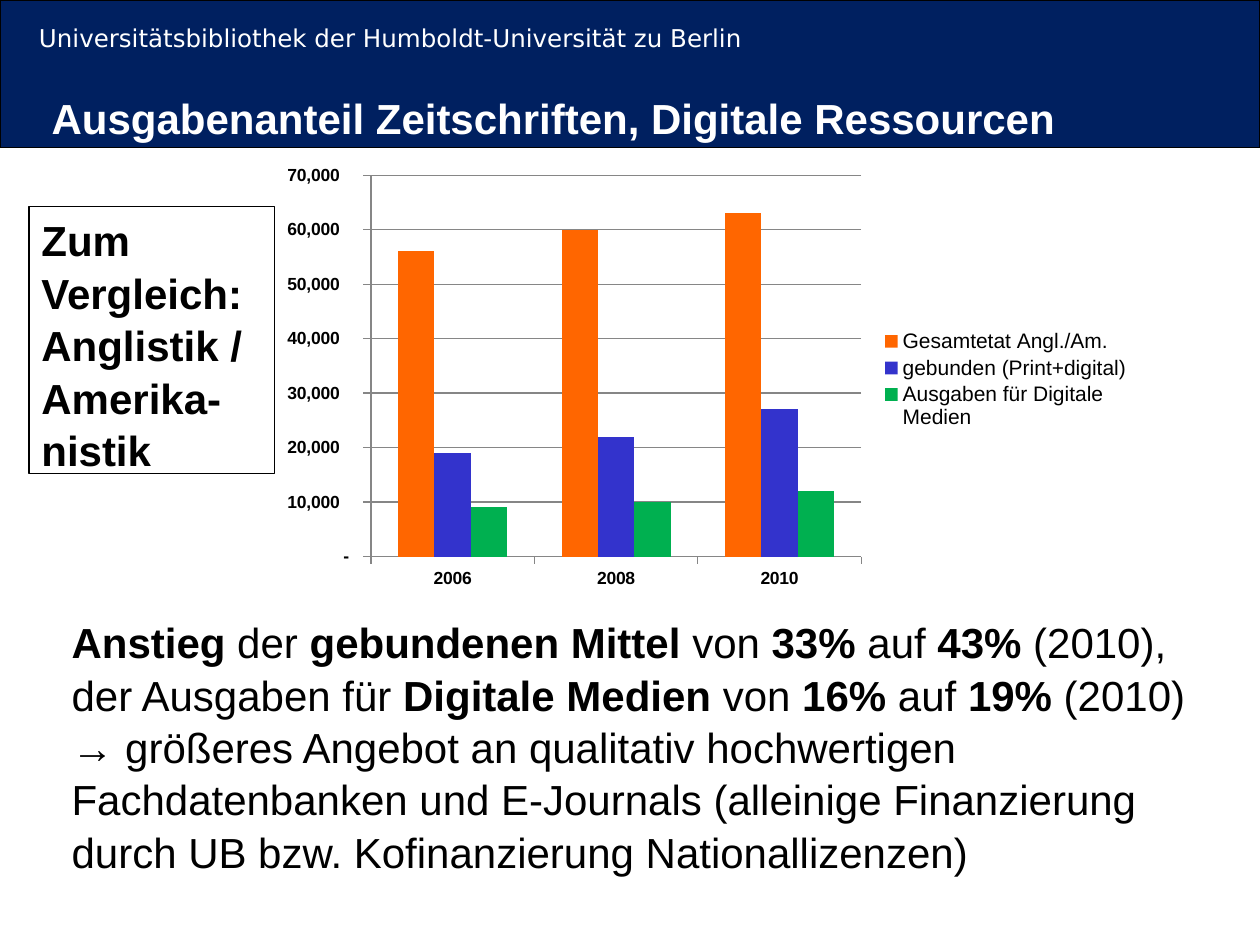
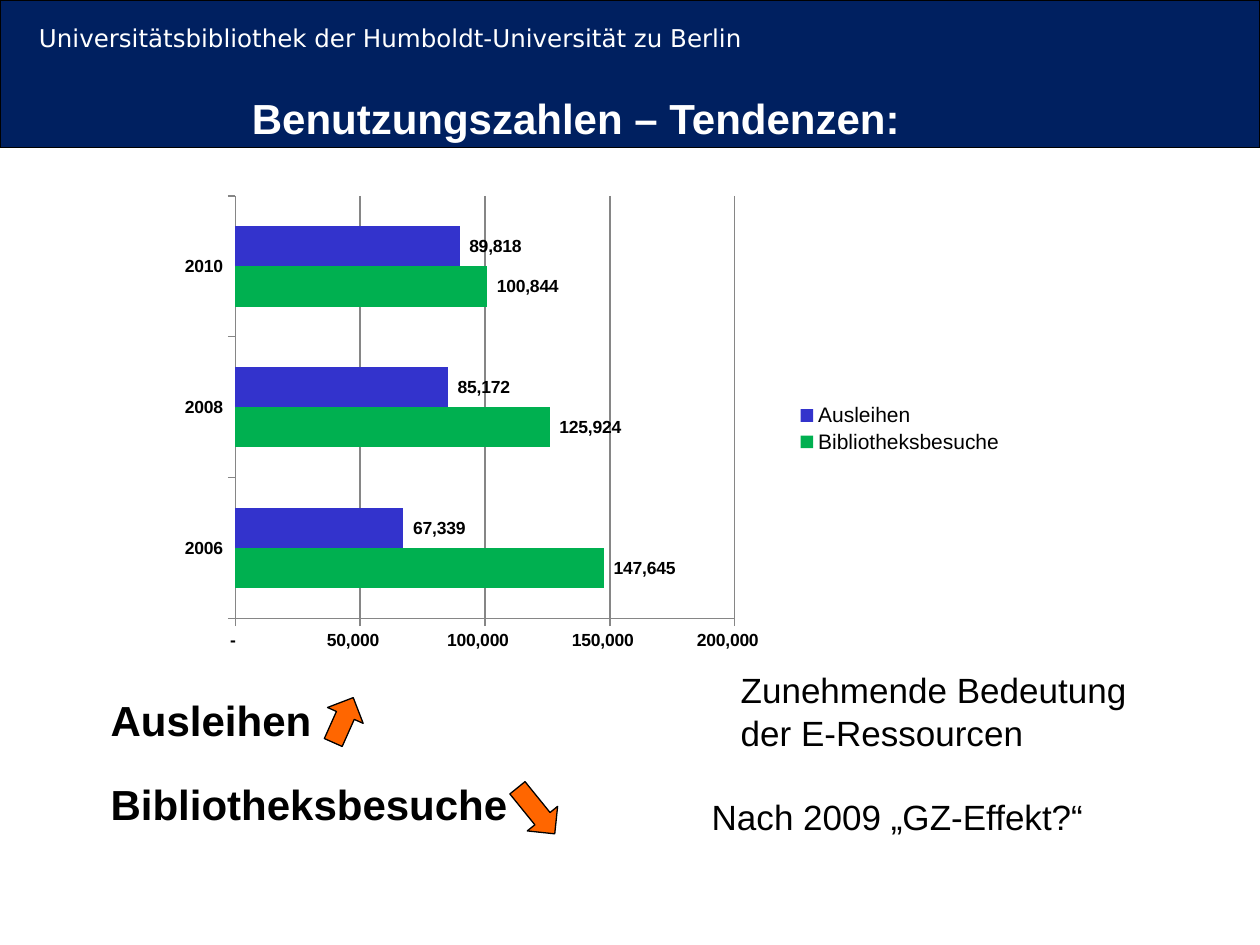
from pptx import Presentation
from pptx import util as u
from pptx.chart import data as cdata
from pptx.dml import color as col
from pptx.enum import chart as ch
from pptx.enum import shapes, text
from pptx.oxml import parse_xml
from pptx.oxml import ns

COLORS = {
    "navy": "002060", "white": "FFFFFF", "black": "000000", "grey": "868686",
    "orange": "FF6600", "blue": "3333CC", "green": "00B050",
}
FONT = "Arial"
HEAD_FONT = "DejaVu Sans"
HEAD = "Universitätsbibliothek der Humboldt-Universität zu Berlin"
YEARS = ["2006", "2008", "2010"]
NUMBERS = '_-* #,##0\\ _€_-;\\-* #,##0\\ _€_-;_-* "-"?'
LEADING = 1.04


def rgb(name):
    return col.RGBColor.from_string(COLORS[name])


def inches(box):
    return [u.Inches(v) for v in box]


def style(font, size, color="black", bold=False, name=FONT):
    font.name = name
    font.size = u.Pt(size)
    font.bold = bold
    font.color.rgb = rgb(color)


def fill_frame(frame, paras, size, color="black", bold=False):
    frame.word_wrap = True
    frame.auto_size = text.MSO_AUTO_SIZE.NONE
    frame.vertical_anchor = text.MSO_ANCHOR.TOP
    frame.text = "\n".join(paras)
    for para in frame.paragraphs:
        para.line_spacing = LEADING
        para.alignment = text.PP_ALIGN.LEFT
        for run in para.runs:
            style(run.font, size, color, bold)


def add_text(slide, box, paras, size, bold=False):
    frame = slide.shapes.add_textbox(*inches(box)).text_frame
    fill_frame(frame, paras, size, bold=bold)
    return frame


def add_shape(slide, kind, box, fill, turn=0):
    shape = slide.shapes.add_shape(kind, *inches(box))
    shape.shadow.inherit = False
    shape.fill.solid()
    shape.fill.fore_color.rgb = rgb(fill)
    shape.line.color.rgb = rgb("black")
    shape.line.width = u.Pt(0.75)
    shape.rotation = turn
    return shape


def add_header(slide, box, caption, align):
    left, top, width, height = box
    title = slide.shapes.title
    band = add_shape(slide, shapes.MSO_SHAPE.RECTANGLE, box, "navy")
    title.element.addprevious(band.element)

    frame = slide.shapes.add_textbox(
        *inches((left + 0.25, top + 0.17, 6, 0.26))).text_frame
    frame.margin_left = frame.margin_right = u.Inches(0.06)
    frame.margin_top = frame.margin_bottom = u.Inches(0.01)
    frame.word_wrap = True
    frame.text = HEAD
    style(frame.paragraphs[0].runs[0].font, 14, "white", name=HEAD_FONT)

    title.left, title.top, title.width, title.height = inches(
        (left + 0.31, top + height - 0.5, 8.52, 0.5))
    fill_frame(title.text_frame, [caption], 24, "white", True)
    title.text_frame.paragraphs[0].alignment = align


def layout(box, inner=False):
    target = '<c:layoutTarget val="inner"/>' if inner else ""
    modes = "".join(f'<c:{k}Mode val="edge"/>' for k in "xy")
    sizes = "".join(f'<c:{k} val="{v}"/>' for k, v in zip("xywh", box))
    return parse_xml(f'<c:layout {ns.nsdecls("c")}><c:manualLayout>'
                     f'{target}{modes}{sizes}</c:manualLayout></c:layout>')


def style_axis(axis):
    axis.major_tick_mark = ch.XL_TICK_MARK.OUTSIDE
    axis.minor_tick_mark = ch.XL_TICK_MARK.NONE
    axis.format.line.color.rgb = rgb("grey")
    style(axis.tick_labels.font, 10, bold=True)


def add_chart(slide, box, kind, series, top, step, plot_box, key_box, labels=False):
    data = cdata.CategoryChartData(number_format=NUMBERS)
    data.categories = YEARS
    for name, values, _ in series:
        data.add_series(name, values)
    chart = slide.shapes.add_chart(kind, *inches(box), data).chart
    chart.has_title = False
    style(chart.font, 10)

    plot = chart.plots[0]
    plot.gap_width = 150
    plot.overlap = 0
    plot.vary_by_categories = False
    for part, (_, _, color) in zip(plot.series, series):
        part.format.fill.solid()
        part.format.fill.fore_color.rgb = rgb(color)
        part.invert_if_negative = False
    if labels:
        plot.has_data_labels = True
        marks = plot.data_labels
        marks.show_value = True
        marks.position = ch.XL_LABEL_POSITION.OUTSIDE_END
        marks.number_format = NUMBERS
        marks.number_format_is_linked = False
        style(marks.font, 10, bold=True)

    style_axis(chart.category_axis)
    axis = chart.value_axis
    style_axis(axis)
    axis.minimum_scale, axis.maximum_scale, axis.major_unit = 0, top, step
    axis.tick_labels.number_format = NUMBERS
    axis.tick_labels.number_format_is_linked = False
    axis.has_major_gridlines = True
    axis.major_gridlines.format.line.color.rgb = rgb("grey")

    chart.has_legend = True
    key = chart.legend
    key.position = ch.XL_LEGEND_POSITION.RIGHT
    key.include_in_layout = False
    style(key.font, 12)
    area = chart.element.xpath(".//c:plotArea")[0]
    for old in area.xpath("./c:layout"):
        area.remove(old)
    area.insert(0, layout(plot_box, True))
    spot = chart.element.xpath(".//c:legend/c:legendPos")[0]
    spot.addnext(layout(key_box))


def add_summary(slide, box):
    lines = [
        ["Anstieg", " der ", "gebundenen Mittel ", "von ", "33%", " auf ", "43%",
         " (2010),"],
        ["", "der Ausgaben für ", "Digitale Medien ", "von ", "16%", " auf ", "19%",
         " (2010)"],
        ["→", " größeres Angebot an qualitativ hochwertigen Fachdatenbanken und "
         "E-Journals (alleinige Finanzierung durch UB bzw. Kofinanzierung "
         "Nationallizenzen)"],
    ]
    frame = add_text(slide, box, [""] * len(lines), 24)
    for para, parts in zip(frame.paragraphs, lines):
        for i, part in enumerate(parts):
            if part:
                run = para.add_run()
                run.text = part
                style(run.font, 24, bold=i % 2 == 0)


def add_trends(slide, box):
    left, top, width, height = box
    frame = add_text(slide, (left, top + 0.21, 7.27, 1.58),
                     ["Ausleihen", "Bibliotheksbesuche"], 24, True)
    frame.paragraphs[1].space_before = u.Pt(18)
    kinds = shapes.MSO_SHAPE
    add_shape(slide, kinds.UP_ARROW, (left + 1.79, top + 0.28, 0.31, 0.39),
              "orange", 24)
    add_shape(slide, kinds.DOWN_ARROW, (left + 3.32, top + 0.96, 0.31, 0.47),
              "orange", 321)
    add_text(slide, (left + 4.77, top + 1.01, 3.98, 0.44),
             ["Nach 2009 „GZ-Effekt?“"], 20)
    add_text(slide, (left + 5, top, 3.59, 0.77),
             ["Zunehmende Bedeutung der E-Ressourcen"], 20)


def budget(slide):
    add_header(slide, (0, 0, 10, 1.17),
               "Ausgabenanteil Zeitschriften, Digitale Ressourcen",
               text.PP_ALIGN.LEFT)
    add_chart(slide, (2.11, 1.25, 6.95, 3.52), ch.XL_CHART_TYPE.COLUMN_CLUSTERED, [
        ("Gesamtetat Angl./Am.", (56000, 60000, 63000), "orange"),
        ("gebunden (Print+digital)", (19000, 22000, 27000), "blue"),
        ("Ausgaben für Digitale Medien", (9000, 10000, 12000), "green"),
    ], 70000, 10000, (0.12, 0.04, 0.56, 0.86), (0.7, 0.38, 0.29, 0.24))
    add_summary(slide, (0.47, 4.83, 9.3, 2.12))
    note = add_shape(slide, shapes.MSO_SHAPE.RECTANGLE, (0.23, 1.64, 1.95, 2.12),
                     "white")
    fill_frame(note.text_frame, ["Zum Vergleich: Anglistik / Amerika-nistik"],
               24, bold=True)


def usage(slide):
    add_header(slide, (0, 0, 10, 1.17), "Benutzungszahlen – Tendenzen:",
               text.PP_ALIGN.CENTER)
    add_chart(slide, (1.33, 1.48, 6.72, 3.77), ch.XL_CHART_TYPE.BAR_CLUSTERED, [
        ("Bibliotheksbesuche", (147645, 125924, 100844), "green"),
        ("Ausleihen", (67339, 85172, 89818), "blue"),
    ], 200000, 50000, (0.08, 0.02, 0.59, 0.89), (0.74, 0.45, 0.25, 0.12), True)
    add_trends(slide, (0.78, 5.24, 8.75, 1.79))


def main():
    deck = Presentation()
    deck.slide_width, deck.slide_height = inches((10, 7.5))
    for build in (budget, usage):
        build(deck.slides.add_slide(deck.slide_layouts[5]))
    deck.save("out.pptx")


if __name__ == "__main__":
    main()
